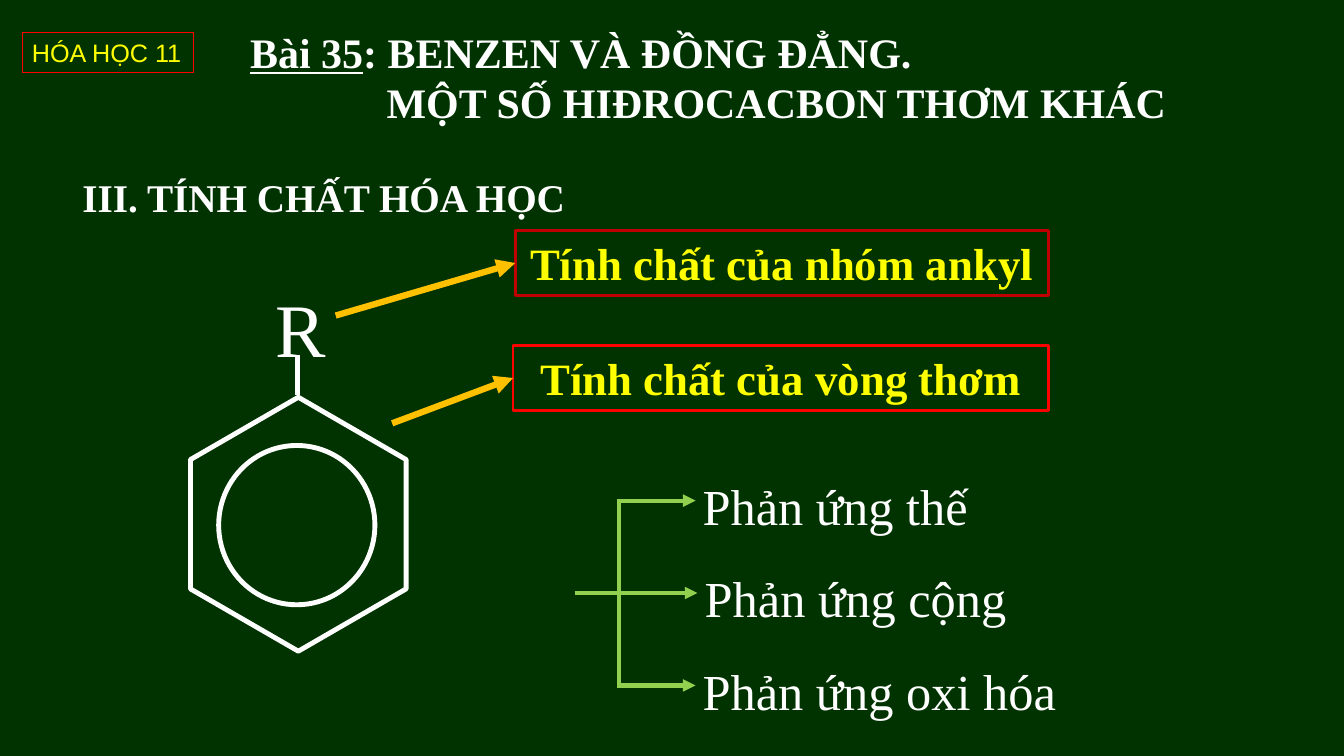
"""Build the chemistry slide on the properties of benzene and its homologues."""
from lxml.etree import SubElement
from pptx import Presentation
from pptx.dml.color import RGBColor
from pptx.enum.shapes import MSO_CONNECTOR as Link, MSO_SHAPE as Kind
from pptx.enum.text import MSO_ANCHOR as Anchor, MSO_AUTO_SIZE as Fit, PP_ALIGN as Align
from pptx.oxml.ns import qn
from pptx.util import Pt

WHITE, YELLOW, RED = "FFFFFF", "FFFF00", "FF0000"
GOLD, GREEN = "FFC000", "92D050"


def hue(code):
    return RGBColor.from_string(code)


def write(para, text, size=36, color=WHITE, face="Times New Roman",
          bold=False, under=False, align=Align.LEFT):
    para.alignment = align
    run = para.add_run()
    run.text = text
    font = run.font
    font.name, font.size, font.bold, font.underline = face, Pt(size), bold, under
    font.color.rgb = hue(color)


deck = Presentation()
deck.slide_width, deck.slide_height = Pt(960), Pt(540)
slide = deck.slides.add_slide(deck.slide_layouts[5])
slide.background.fill.solid()
slide.background.fill.fore_color.rgb = hue("003300")
shapes = slide.shapes

title = shapes.title
title.left, title.top, title.width, title.height = Pt(171.4), Pt(15.2), Pt(690.5), Pt(80)
frame = title.text_frame
frame.auto_size, frame.word_wrap, frame.vertical_anchor = Fit.NONE, True, Anchor.TOP
first, second = frame.paragraphs[0], frame.add_paragraph()
write(first, "Bài 35", size=30, bold=True, under=True)
write(first, ": BENZEN VÀ ĐỒNG ĐẲNG.", size=30, bold=True)
write(second, "MỘT SỐ HIĐROCACBON THƠM KHÁC", size=30, bold=True)
props = second._p.get_or_add_pPr()
props.set("marL", str(Pt(97.5)))
props.set("indent", "0")

head = shapes.add_textbox(Pt(51.8), Pt(103.7), Pt(370), Pt(58.3)).text_frame
head.word_wrap = True
head.paragraphs[0].line_spacing = 1.5
write(head.paragraphs[0], "III. TÍNH CHẤT HÓA HỌC", size=28, bold=True)

big = dict(size=32, bold=True, align=Align.CENTER)
labels = []
for text, x, y, wide, high, edge, weight, style in [
    ("HÓA HỌC 11", 15.8, 23, 122.4, 28.8, RED, 0.75, dict(size=18, face="Arial")),
    ("Tính chất của nhóm ankyl", 368, 164.9, 381, 46, "C00000", 2, big),
    ("Tính chất của vòng thơm", 366.5, 247, 382.5, 46, RED, 2, big),
]:
    label = shapes.add_shape(Kind.RECTANGLE, Pt(x), Pt(y), Pt(wide), Pt(high))
    label.shadow.inherit = False
    label.fill.background()
    label.line.color.rgb, label.line.width = hue(edge), Pt(weight)
    label.text_frame.word_wrap = style is big
    write(label.text_frame.paragraphs[0], text, color=YELLOW, **style)
    labels.append(label)

for kind, x, y, wide, high in [
    (Kind.HEXAGON, 122.4, 297.4, 181.4, 154.1),
    (Kind.OVAL, 156.2, 318.2, 111.6, 113.8),
]:
    ring = shapes.add_shape(kind, Pt(x), Pt(y), Pt(wide), Pt(high))
    ring.shadow.inherit = False
    ring.fill.background()
    ring.line.color.rgb, ring.line.width = hue(WHITE), Pt(3.5)
    if kind == Kind.HEXAGON:
        ring.rotation = 270
        ring.adjustments[0] = 0.289

rows = [357.6 + 66 * i for i in range(3)]
top, mid, low = rows
lines = [
    (212.4, 253.4, 212.4, 282.2, WHITE, 3.5, False, None),
    (239.8, 225.4, 363.6, 187.9, GOLD, 4.5, True, labels[1]),
    (280.1, 302.4, 363.6, 270, GOLD, 4.5, True, labels[2]),
    (410.4, mid, 442, mid, GREEN, 3, False, None),
    (442, top, 442, low, GREEN, 3, False, None),
    (440.6, top, 496.8, top, GREEN, 3, True, None),
    (442, mid, 498.2, mid, GREEN, 3, True, None),
    (440.6, low, 496.8, low, GREEN, 3, True, None),
]
for x, y, right, end, color, weight, arrow, goal in lines:
    link = shapes.add_connector(Link.STRAIGHT, Pt(x), Pt(y), Pt(right), Pt(end))
    link.line.color.rgb, link.line.width = hue(color), Pt(weight)
    if arrow:
        SubElement(link.line._get_or_add_ln(), qn("a:tailEnd"), type="triangle")
    SubElement(link._element.spPr, qn("a:effectLst"))
    if goal:
        link.end_connect(goal, 1)

for text, x, y, wide, high, size, side, edge in [
    ("R", 189.4, 198, 160.6, 75, 54, 7.2, 3.6),
    ("Phản ứng thế", 492.5, top - 23.4, 296, 53.3, 36, 9.4, 5),
    ("Phản ứng cộng", 494, mid - 23.4, 376, 53.3, 36, 9.4, 5),
    ("Phản ứng oxi hóa", 492.5, low - 23.4, 352, 53.3, 36, 9.4, 5),
]:
    frame = shapes.add_textbox(Pt(x), Pt(y), Pt(wide), Pt(high)).text_frame
    frame.word_wrap = True
    frame.margin_left = frame.margin_right = Pt(side)
    frame.margin_top = frame.margin_bottom = Pt(edge)
    write(frame.paragraphs[0], text, size=size)

deck.save("out.pptx")
